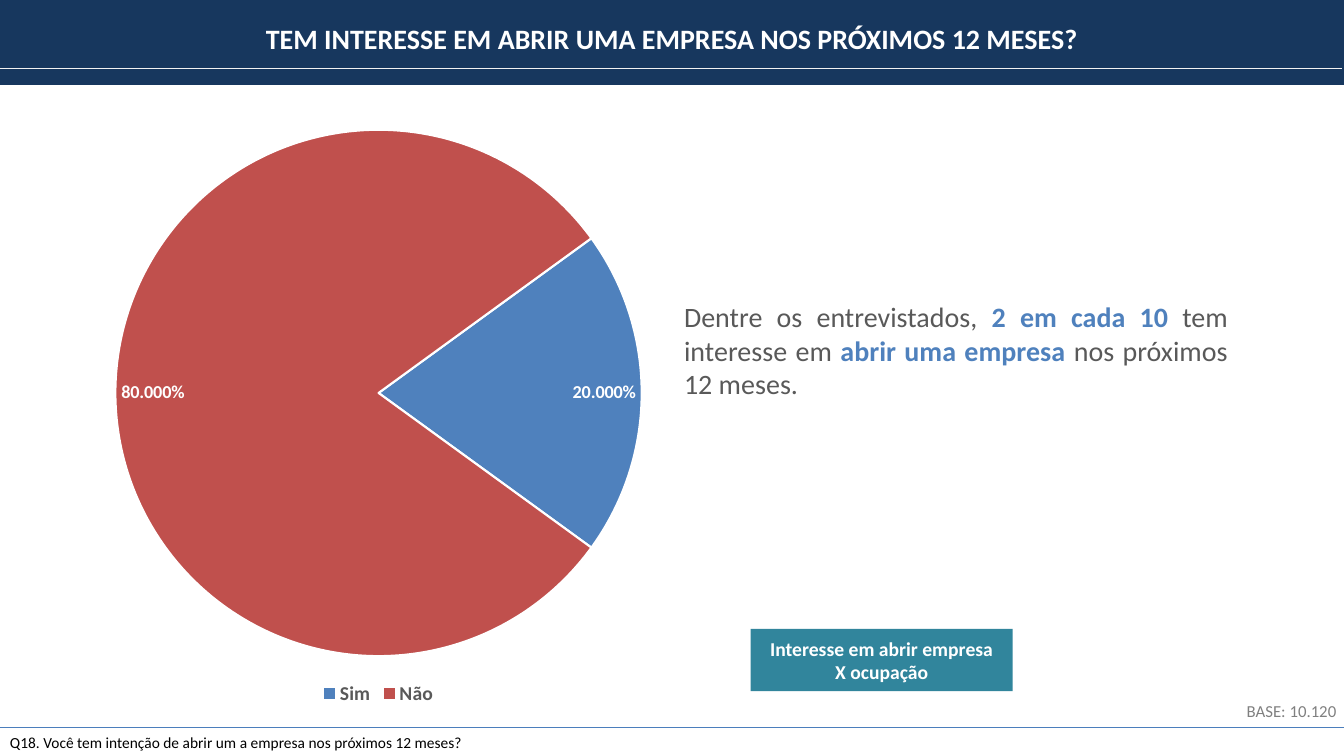
from dataclasses import dataclass

from lxml.etree import SubElement
from pptx import Presentation
from pptx.chart.data import CategoryChartData
from pptx.dml.color import RGBColor
from pptx.enum.chart import XL_CHART_TYPE as ChartType
from pptx.enum.chart import XL_LABEL_POSITION as LabelPos
from pptx.enum.chart import XL_LEGEND_POSITION as LegendPos
from pptx.enum.shapes import MSO_CONNECTOR, MSO_SHAPE
from pptx.enum.text import MSO_ANCHOR as Anchor
from pptx.enum.text import MSO_AUTO_SIZE as AutoSize
from pptx.enum.text import PP_ALIGN as Align
from pptx.oxml.ns import qn
from pptx.util import Cm, Pt


@dataclass(frozen=True)
class Theme:
    font: str = "Calibri"
    navy: str = "17375E"
    blue: str = "4F81BD"
    red: str = "C0504D"
    teal: str = "31859C"
    white: str = "FFFFFF"
    black: str = "000000"
    text: str = "595959"
    muted: str = "808080"
    header_rule: str = "F2F2F2"
    footer_rule: str = "4B7EBC"
    title_size: float = 20
    body_size: float = 20
    button_size: float = 14
    legend_size: float = 14
    label_size: float = 13
    base_size: float = 12
    question_size: float = 11


THEME = Theme()
SLIDE_W, SLIDE_H = 33.87, 19.05
FOOTER_Y = 18.34


def style_font(font, size, color, bold=False):
    font.name = THEME.font
    font.size = Pt(size)
    font.bold = bold
    font.color.rgb = RGBColor.from_string(color)


def write(tf, paragraphs, size, align, anchor=Anchor.TOP):
    """Fill a text frame; each paragraph is a list of (text, colour, bold) runs."""
    tf.word_wrap = True
    tf.auto_size = AutoSize.NONE
    tf.vertical_anchor = anchor
    for i, runs in enumerate(paragraphs):
        p = tf.add_paragraph() if i else tf.paragraphs[0]
        p.alignment = align
        for text, color, bold in runs:
            r = p.add_run()
            r.text = text
            style_font(r.font, size, color, bold)


def add_title(s, text, box):
    sp = s.shapes.title
    sp.left, sp.top, sp.width, sp.height = map(Cm, box)
    write(sp.text_frame, [[(text, THEME.white, True)]], THEME.title_size,
          Align.CENTER)
    s.shapes._spTree.append(sp._element)  # bring in front of the header band


def add_box(s, box, color):
    sp = s.shapes.add_shape(MSO_SHAPE.RECTANGLE, *map(Cm, box))
    sp.shadow.inherit = False
    sp.fill.solid()
    sp.fill.fore_color.rgb = RGBColor.from_string(color)
    sp.line.fill.background()
    return sp


def add_note(s, text, box, size, color, align):
    sp = s.shapes.add_textbox(*map(Cm, box))
    write(sp.text_frame, [[(text, color, False)]], size, align)


def add_rule(s, x1, x2, y, color, width):
    line = s.shapes.add_connector(MSO_CONNECTOR.STRAIGHT,
                                  Cm(x1), Cm(y), Cm(x2), Cm(y))
    line.line.color.rgb = RGBColor.from_string(color)
    line.line.width = Pt(width)
    SubElement(line._element.spPr, qn("a:effectLst"))


def add_pie(s, box, slices, start_angle):
    """Draw a pie from (category, value, colour) slices."""
    data = CategoryChartData(number_format="0.000%")
    data.categories = [name for name, _, _ in slices]
    data.add_series("Series 1", [value for _, value, _ in slices])
    chart = s.shapes.add_chart(ChartType.PIE, *map(Cm, box), data).chart
    chart.has_title = False
    chart.font.name = THEME.font

    chart.has_legend = True
    chart.legend.position = LegendPos.BOTTOM
    chart.legend.include_in_layout = False
    style_font(chart.legend.font, THEME.legend_size, THEME.text, True)

    plot = chart.plots[0]
    plot.vary_by_categories = True
    angle = plot._element.find(qn("c:firstSliceAng"))
    if angle is None:
        angle = SubElement(plot._element, qn("c:firstSliceAng"))
    angle.set("val", str(start_angle))

    series = plot.series[0]
    for i, (_, _, color) in enumerate(slices):
        fmt = series.points[i].format
        fmt.fill.solid()
        fmt.fill.fore_color.rgb = RGBColor.from_string(color)
        fmt.line.color.rgb = RGBColor.from_string(THEME.white)
        fmt.line.width = Pt(1.5)

    labels = series.data_labels
    labels.show_value = True
    labels.show_percentage = False
    labels.number_format = "0.000%"
    labels.number_format_is_linked = False
    labels.position = LabelPos.INSIDE_END
    style_font(labels.font, THEME.label_size, THEME.white, True)


def main():
    prs = Presentation()
    prs.slide_width, prs.slide_height = Cm(SLIDE_W), Cm(SLIDE_H)
    s = prs.slides.add_slide(prs.slide_layouts[5])

    add_rule(s, 0, SLIDE_W, FOOTER_Y, THEME.footer_rule, 0.75)
    add_box(s, (0, 0, SLIDE_W, 2.14), THEME.navy)
    add_title(s, "TEM INTERESSE EM ABRIR UMA EMPRESA NOS PRÓXIMOS 12 MESES?",
              (0, 0.41, SLIDE_W, 1.11))
    add_rule(s, 0, 33.81, 1.73, THEME.header_rule, 1)

    add_pie(s, (0.94, 2.92, 17.2, 14.96),
            [("Sim", 0.2, THEME.blue), ("Não", 0.8, THEME.red)], 54)

    add_note(s, "Q18. Você tem intenção de abrir um a empresa nos próximos 12 meses?",
             (0, FOOTER_Y, 16.92, 0.71), THEME.question_size, THEME.black,
             Align.LEFT)
    add_note(s, "BASE: 10.120", (28.14, 17.53, 5.79, 0.76),
             THEME.base_size, THEME.muted, Align.RIGHT)

    button = add_box(s, (18.92, 15.85, 6.6, 1.57), THEME.teal)
    write(button.text_frame,
          [[("Interesse em abrir empresa", THEME.white, True)],
           [("X ocupação", THEME.white, True)]],
          THEME.button_size, Align.CENTER, Anchor.MIDDLE)

    finding = add_box(s, (16.99, 7.42, 14.2, 2.82), THEME.white)
    write(finding.text_frame,
          [[("Dentre os entrevistados, ", THEME.text, False),
            ("2 em cada 10 ", THEME.blue, True),
            ("tem interesse em ", THEME.text, False),
            ("abrir uma empresa ", THEME.blue, True),
            ("nos próximos 12 meses.", THEME.text, False)]],
          THEME.body_size, Align.JUSTIFY)

    prs.save("out.pptx")


if __name__ == "__main__":
    main()
